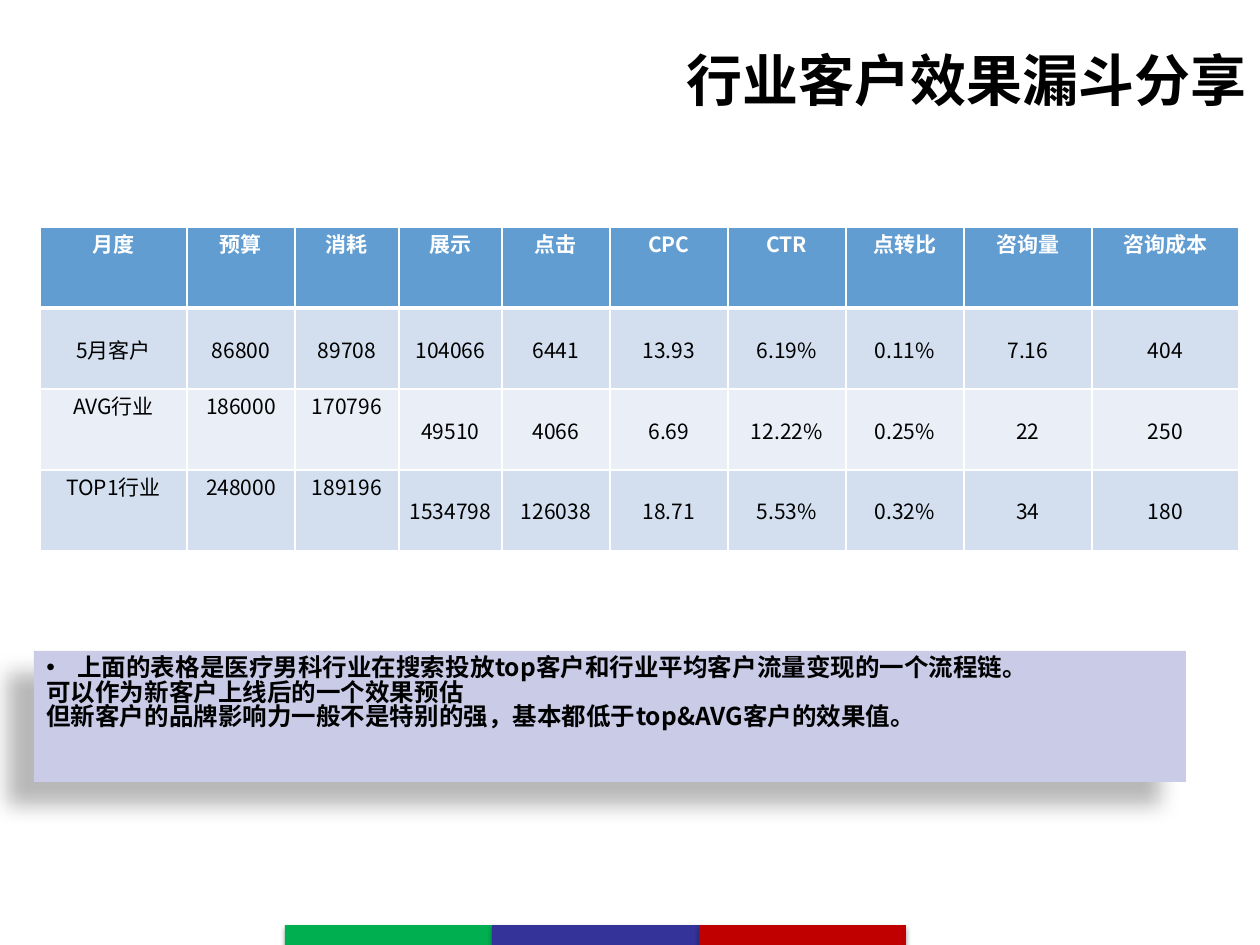
from lxml import etree
from pptx import Presentation
from pptx.dml.color import RGBColor
from pptx.enum.shapes import MSO_SHAPE
from pptx.enum.text import MSO_ANCHOR, PP_ALIGN
from pptx.oxml import parse_xml
from pptx.oxml.ns import nsdecls, qn
from pptx.util import Emu, Pt

RECT = MSO_SHAPE.RECTANGLE
TOP, MID = MSO_ANCHOR.TOP, MSO_ANCHOR.MIDDLE
LEFT, MIDDLE, RIGHT = PP_ALIGN.LEFT, PP_ALIGN.CENTER, PP_ALIGN.RIGHT
SCALE = 914400 / 126
FACE = "Noto Sans CJK SC"
HUES = {
    "ink": "000000", "white": "FFFFFF", "head": "629DD1",
    "odd": "D3DFEE", "even": "EAEFF7", "note": "C9CBE7",
    "green": "00B050", "blue": "333399", "red": "C00000",
}
TITLE = "行业客户效果漏斗分享"
WIDTHS = [147, 108, 104, 103, 108, 118, 118, 118, 128, 147]
ROWS = [
    ["月度", "预算", "消耗", "展示", "点击", "CPC", "CTR", "点转比", "咨询量", "咨询成本"],
    ["5月客户", "86800", "89708", "104066", "6441", "13.93", "6.19%", "0.11%", "7.16", "404"],
    ["AVG行业", "186000", "170796", "49510", "4066", "6.69", "12.22%", "0.25%", "22", "250"],
    ["TOP1行业", "248000", "189196", "1534798", "126038", "18.71", "5.53%", "0.32%", "34", "180"],
]
NOTES = [
    "上面的表格是医疗男科行业在搜索投放top客户和行业平均客户流量变现的一个流程链。",
    "可以作为新客户上线后的一个效果预估",
    "但新客户的品牌影响力一般不是特别的强，基本都低于top&AVG客户的效果值。",
]


def px(num):
    """Turn px into EMU."""
    return Emu(round(num * SCALE))


def put(item, vals):
    """Set each attribute of an item from a dict."""
    for key, val in vals.items():
        setattr(item, key, val)


def paint(item, hue):
    """Fill an item with one named colour."""
    item.fill.solid()
    item.fill.fore_color.rgb = RGBColor.from_string(HUES[hue])


def write(para, text, size, bold, align, hue="ink"):
    """Write one formatted run in a paragraph."""
    para.alignment = align
    run = para.add_run()
    run.text = text
    put(run.font, {"size": Pt(size), "bold": bold, "name": FACE})
    run.font.color.rgb = RGBColor.from_string(HUES[hue])
    etree.SubElement(run.font._element, qn("a:ea"), typeface=FACE)


def shade(shape, alpha, blur, dist, angle):
    """Give a shape an outer shadow; lengths in points, alpha in percent."""
    shape.shadow.inherit = False
    glow = parse_xml(
        f'<a:outerShdw {nsdecls("a")} blurRad="{Pt(blur)}" dist="{Pt(dist)}" '
        f'dir="{angle * 60000}" algn="ctr" rotWithShape="0">'
        f'<a:srgbClr val="{HUES["ink"]}"><a:alpha val="{alpha * 1000}"/>'
        f'</a:srgbClr></a:outerShdw>')
    shape._element.spPr.find(qn("a:effectLst")).append(glow)


def block(shapes, box, hue, shadow):
    """Add a plain filled rectangle with a shadow."""
    shape = shapes.add_shape(RECT, *map(px, box))
    paint(shape, hue)
    shape.line.fill.background()
    shade(shape, *shadow)
    return shape


def edge(cell, side, width):
    """Draw one white border of a cell."""
    cell._tc.get_or_add_tcPr().append(parse_xml(
        f'<a:{side} {nsdecls("a")} w="{Pt(width)}"><a:solidFill>'
        f'<a:srgbClr val="{HUES["white"]}"/></a:solidFill></a:{side}>'))


def head(slide, box):
    """Place the slide title in a box."""
    title = slide.shapes.title
    put(title, dict(zip(("left", "top", "width", "height"), map(px, box))))
    put(title.text_frame, {"vertical_anchor": MID, "word_wrap": True})
    write(title.text_frame.paragraphs[0], TITLE, 32, True, RIGHT)


def grid(slide, box):
    """Place the table of figures in a box."""
    table = slide.shapes.add_table(len(ROWS), len(WIDTHS), *map(px, box)).table
    for col, wide in zip(table.columns, WIDTHS):
        col.width = px(wide)
    for r, row in enumerate(ROWS):
        table.rows[r].height = px(box[3] // len(ROWS))
        for c, text in enumerate(row):
            cell = table.cell(r, c)
            high = r == 0 or (r > 1 and c < 3)
            put(cell, {"margin_left": px(1), "margin_right": px(1),
                       "margin_top": px(1), "margin_bottom": 0,
                       "vertical_anchor": TOP if high else MID})
            for side in ("lnL", "lnR", "lnT", "lnB"):
                thick = (r, side) in ((0, "lnB"), (1, "lnT"))
                edge(cell, side, 3 if thick else 1)
            paint(cell, "head" if r == 0 else "odd" if r % 2 else "even")
            write(cell.text_frame.paragraphs[0], text, 12, r == 0, MIDDLE,
                  "ink" if r else "white")


def panel(slide, box):
    """Place the shaded notes in a box."""
    frame = block(slide.shapes, box, "note", (28, 11.8, 19.7, 141)).text_frame
    put(frame, {"word_wrap": True, "vertical_anchor": TOP})
    for i, text in enumerate(NOTES):
        para = frame.add_paragraph() if i else frame.paragraphs[0]
        para.line_spacing = 0.83
        if i == 0:
            props = para._p.get_or_add_pPr()
            props.set("marL", str(px(31)))
            props.set("indent", str(px(-31)))
            etree.SubElement(props, qn("a:buFont"), typeface="Arial")
            etree.SubElement(props, qn("a:buChar"), char="•")
        write(para, text, 14, True, LEFT)


def strip(slide, box):
    """Place the three colour bars side by side in a box."""
    left, top, width, height = box
    hues = ("green", "blue", "red")
    step = width // len(hues)
    group = slide.shapes.add_group_shape()
    for i, hue in enumerate(hues):
        block(group.shapes, (left + i * step, top, step, height), hue,
              (35, 3.1, 1.8, 90))


def main():
    """Build and save the slide."""
    deck = Presentation()
    put(deck, {"slide_width": px(1260), "slide_height": px(945)})
    slide = deck.slides.add_slide(deck.slide_layouts[5])
    head(slide, (126, 0, 1134, 158))
    grid(slide, (40, 227, 1199, 324))
    panel(slide, (34, 651, 1152, 131))
    strip(slide, (285, 925, 621, 20))
    deck.save("out.pptx")


if __name__ == "__main__":
    main()
